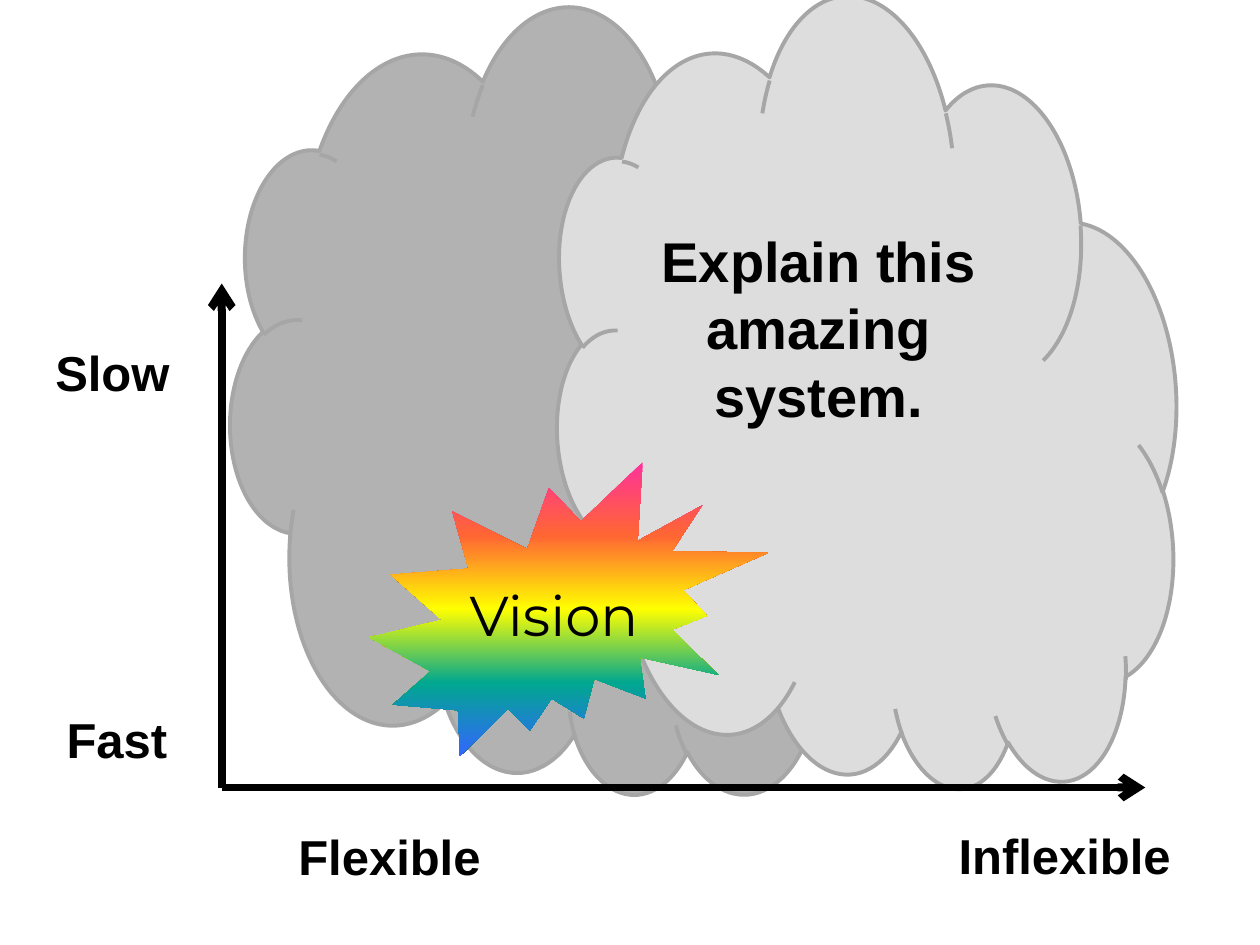
from lxml.etree import SubElement as Sub
from pptx import Presentation
from pptx.dml.color import RGBColor as RGB
from pptx.enum.shapes import MSO_CONNECTOR as Conn, MSO_SHAPE as Shape
from pptx.enum.text import MSO_ANCHOR as Anchor, MSO_AUTO_SIZE as Auto, PP_ALIGN as Align
from pptx.oxml.ns import qn
from pptx.util import Inches, Pt

BLACK = RGB(0x00, 0x00, 0x00)
DARK = RGB(0xB2, 0xB2, 0xB2)
LIGHT = RGB(0xDD, 0xDD, 0xDD)
EDGE = RGB(0xA6, 0xA6, 0xA6)
RAINBOW = [RGB(0xFF, 0x33, 0x99), RGB(0xFF, 0x66, 0x33), RGB(0xFF, 0xFF, 0x00),
           RGB(0x01, 0xA7, 0x8F), RGB(0x33, 0x66, 0xFF)]


class Deck:
    bold = {"name": "Arial", "size": Pt(28), "bold": True}
    large = {**bold, "size": Pt(32)}
    thin = {"name": "Montserrat", "size": Pt(32), "bold": False}

    def __init__(self, slide):
        self.slide = slide

    def shape(self, kind, *box):
        item = self.slide.shapes.add_shape(kind, *map(Inches, box))
        item.shadow.inherit = False
        return item

    def cloud(self, box, color, turn=0):
        item = self.shape(Shape.CLOUD, *box)
        item.rotation = turn
        item._element.spPr.find(qn("a:xfrm")).set("flipV", "1")
        item.fill.solid()
        item.fill.fore_color.rgb = color
        item.line.color.rgb = EDGE
        item.line.width = Pt(2.25)

    def burst(self, box, text, colors):
        item = self.shape(Shape.EXPLOSION2, *box)
        item.line.fill.background()
        item.fill.gradient()
        # Even stops, running from top to bottom
        grad = item._element.spPr.find(qn("a:gradFill"))
        stops = grad.find(qn("a:gsLst"))
        for old in list(stops):
            stops.remove(old)
        for i, color in enumerate(colors):
            stop = Sub(stops, qn("a:gs"), pos=str(i * 100000 // (len(colors) - 1)))
            Sub(stop, qn("a:srgbClr"), val=str(color))
        grad.find(qn("a:lin")).set("ang", "5400000")
        item.text_frame.vertical_anchor = Anchor.MIDDLE
        self.words(item.text_frame, text, self.thin, Align.CENTER)

    def arrow(self, start, end):
        item = self.slide.shapes.add_connector(Conn.STRAIGHT, *map(Inches, start + end))
        item.line.color.rgb = BLACK
        item.line.width = Pt(4.5)
        line = item._element.spPr.find(qn("a:ln"))
        Sub(line, qn("a:tailEnd"), type="arrow")
        Sub(item._element.spPr, qn("a:effectLst"))

    def label(self, box, text, style=bold, align=Align.LEFT, wrap=False):
        frame = self.slide.shapes.add_textbox(*map(Inches, box)).text_frame
        frame.auto_size = Auto.SHAPE_TO_FIT_TEXT
        self.words(frame, text, style, align, wrap)

    def words(self, frame, text, style, align, wrap=False):
        frame.word_wrap = wrap
        para = frame.paragraphs[0]
        para.alignment = align
        run = para.add_run()
        run.text = text
        for key, value in style.items():
            setattr(run.font, key, value)
        run.font.color.rgb = BLACK


def main():
    show = Presentation()
    show.slide_width, show.slide_height = Inches(10), Inches(7.5)
    deck = Deck(show.slides.add_slide(show.slide_layouts[6]))

    # Clouds
    deck.cloud((1.83, 0.08, 5.25, 6.25), DARK)
    deck.cloud((4.41, -0.01, 4.92, 6.34), LIGHT, turn=-4)

    # Axes from a shared corner
    corner = (1.76, 6.25)
    for end in ((1.76, 2.25), (9.09, 6.25)):
        deck.arrow(corner, end)

    # Axis labels
    for text, left, top, width in (("Fast", 0.43, 5.58, 1.01), ("Slow", 0.34, 2.67, 1.12),
                                   ("Flexible", 2.27, 6.51, 1.67),
                                   ("Inflexible", 7.51, 6.5, 1.91)):
        deck.label((left, top, width, 0.57), text)

    # Vision and message
    deck.burst((2.93, 3.67, 3.17, 2.33), "Vision", RAINBOW)
    deck.label((5, 1.75, 3, 1.72), "Explain this amazing system.",
               deck.large, Align.CENTER, wrap=True)

    show.save("out.pptx")


if __name__ == "__main__":
    main()
